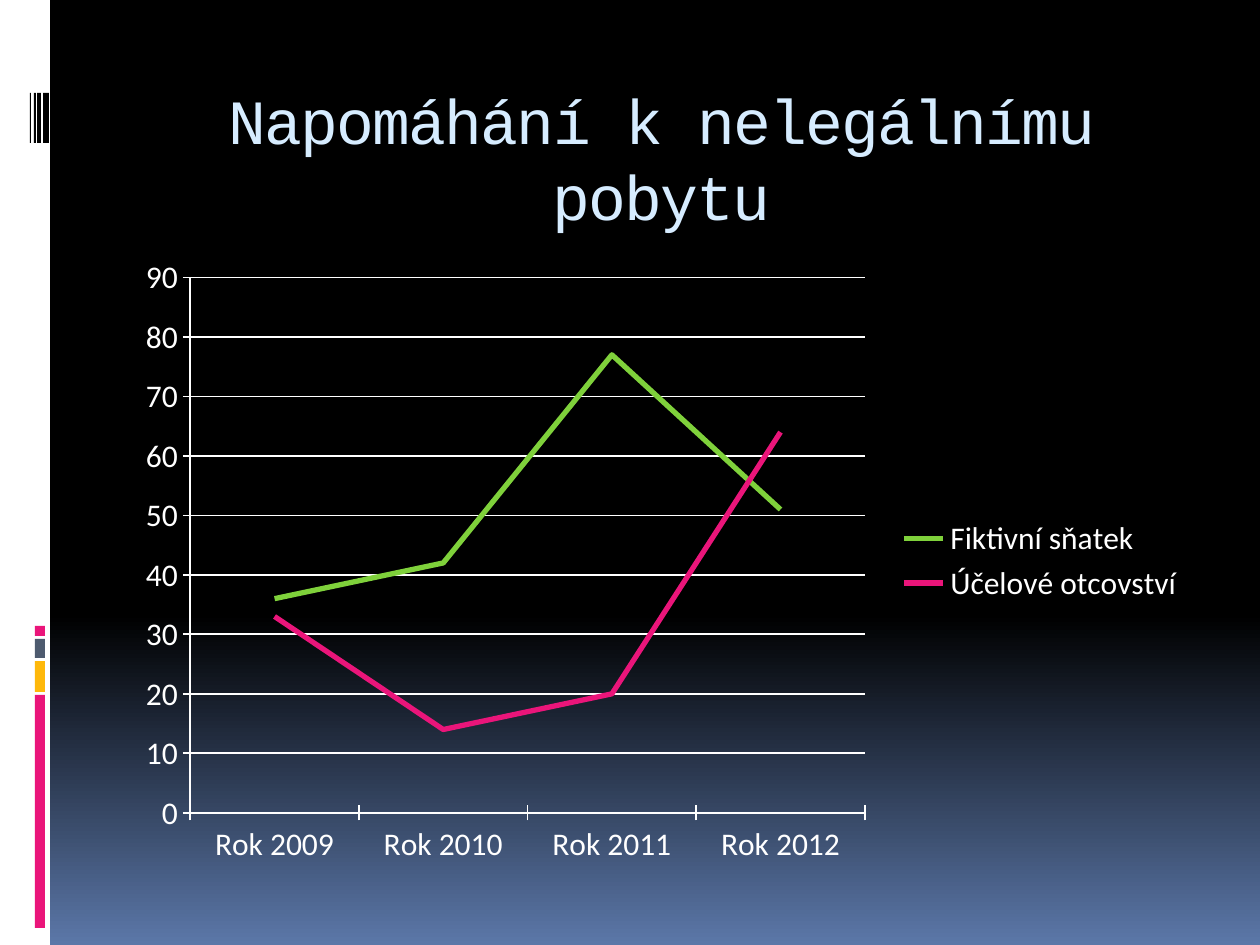
from copy import deepcopy

from lxml import etree
from pptx import Presentation
from pptx.chart.data import CategoryChartData
from pptx.dml.color import RGBColor
from pptx.enum.chart import XL_CHART_TYPE, XL_LEGEND_POSITION, XL_TICK_MARK
from pptx.enum.shapes import MSO_SHAPE
from pptx.enum.text import MSO_ANCHOR, PP_ALIGN
from pptx.oxml.ns import qn
from pptx.util import Pt

PX = 914400 / 126
COLORS = {
    "black": "000000",
    "white": "FFFFFF",
    "horizon": "5B77A8",
    "title": "D6ECFF",
    "pink": "EA157A",
    "amber": "FEB80A",
    "slate": "4E5B6F",
    "green": "7FD13B",
}


def emu(*lengths):
    return [round(length * PX) for length in lengths]


def rgb(name):
    return RGBColor.from_string(COLORS[name])


class SlideBuilder:
    title_font = "Courier New"
    chart_font = "Calibri"

    def __init__(self, slide):
        self.slide = slide

    def background(self, stops):
        """Fill top to bottom with (position, color) stops."""
        fill = self.slide.background.fill
        fill.gradient()
        fill.gradient_angle = 270
        stop_list = self.slide.element.find(".//" + qn("a:gsLst"))
        while len(stop_list) < len(stops):
            stop_list.append(deepcopy(stop_list[0]))
        for stop, (position, color) in zip(fill.gradient_stops, stops):
            stop.position = position
            stop.color.rgb = rgb(color)

    def bar(self, x, y, width, height, color):
        bar = self.slide.shapes.add_shape(MSO_SHAPE.RECTANGLE, *emu(x, y, width, height))
        bar.shadow.inherit = False
        bar.fill.solid()
        bar.fill.fore_color.rgb = rgb(color)
        bar.line.fill.background()

    def title(self, text, x, y, width, height):
        frame = self.slide.shapes.add_textbox(*emu(x, y, width, height)).text_frame
        frame.word_wrap = True
        frame.vertical_anchor = MSO_ANCHOR.TOP
        frame.margin_top = emu(11)[0]
        heading = frame.paragraphs[0]
        heading.alignment = PP_ALIGN.CENTER
        heading.line_spacing = Pt(43.4)
        run = heading.add_run()
        run.text = text
        heading.font.size = Pt(36)
        heading.font.name = self.title_font
        heading.font.color.rgb = rgb("title")
        run.font._element.set("spc", "-100")

    def line_chart(self, categories, series, x, y, width, height, plot):
        """Draw series of (name, values, color); plot holds fractions of the chart."""
        data = CategoryChartData()
        data.categories = categories
        for name, values, _ in series:
            data.add_series(name, values)
        chart = self.slide.shapes.add_chart(
            XL_CHART_TYPE.LINE, *emu(x, y, width, height), data).chart
        chart.has_title = False
        chart.font.size = Pt(18)
        chart.font.name = self.chart_font
        chart.font.color.rgb = rgb("white")
        chart.has_legend = True
        chart.legend.position = XL_LEGEND_POSITION.RIGHT
        chart.legend.include_in_layout = False

        chart.plots[0].vary_by_categories = False
        for line, (_, _, color) in zip(chart.plots[0].series, series):
            line.smooth = False
            line.format.line.width = Pt(3)
            line.format.line.color.rgb = rgb(color)

        scale = chart.value_axis
        scale.minimum_scale, scale.maximum_scale, scale.major_unit = 0, 90, 10
        scale.has_major_gridlines = True
        for axis in (chart.category_axis, scale):
            axis.major_tick_mark = XL_TICK_MARK.CROSS
        for rule in (chart.category_axis, scale, scale.major_gridlines):
            rule.format.line.width = Pt(1)
            rule.format.line.color.rgb = rgb("white")
        self.place_plot(chart, plot)

    @staticmethod
    def place_plot(chart, plot):
        area = chart._chartSpace.find(".//" + qn("c:plotArea"))
        for automatic in area.findall(qn("c:layout")):
            area.remove(automatic)
        layout = etree.Element(qn("c:layout"))
        area.insert(0, layout)
        manual = etree.SubElement(layout, qn("c:manualLayout"))
        settings = [("layoutTarget", "inner"), ("xMode", "edge"), ("yMode", "edge")]
        for tag, value in settings + list(zip("xywh", plot)):
            etree.SubElement(manual, qn("c:" + tag)).set("val", str(value))


def main():
    presentation = Presentation()
    presentation.slide_width, presentation.slide_height = emu(1260, 945)
    builder = SlideBuilder(presentation.slides.add_slide(presentation.slide_layouts[6]))

    builder.background([(0, "black"), (0.65, "black"), (1, "horizon")])
    builder.bar(0, 0, 50, 945, "white")
    for y, height, color in [(695, 233, "pink"), (661, 31, "amber"),
                             (639, 19, "slate"), (626, 10, "pink")]:
        builder.bar(35, y, 10, height, color)
    for x, width in [(43, 6), (37, 4), (34, 2), (30, 1)]:
        builder.bar(x, 93, width, 50, "black")

    builder.title("Napomáhání k nelegálnímu pobytu", 126, 70, 1071, 126)
    builder.line_chart(
        ["Rok 2009", "Rok 2010", "Rok 2011", "Rok 2012"],
        [("Fiktivní sňatek", (36, 42, 77, 51), "green"),
         ("Účelové otcovství", (33, 14, 20, 64), "pink")],
        126, 246, 1071, 630, plot=(0.06, 0.05, 0.63, 0.85))
    presentation.save("out.pptx")


if __name__ == "__main__":
    main()
